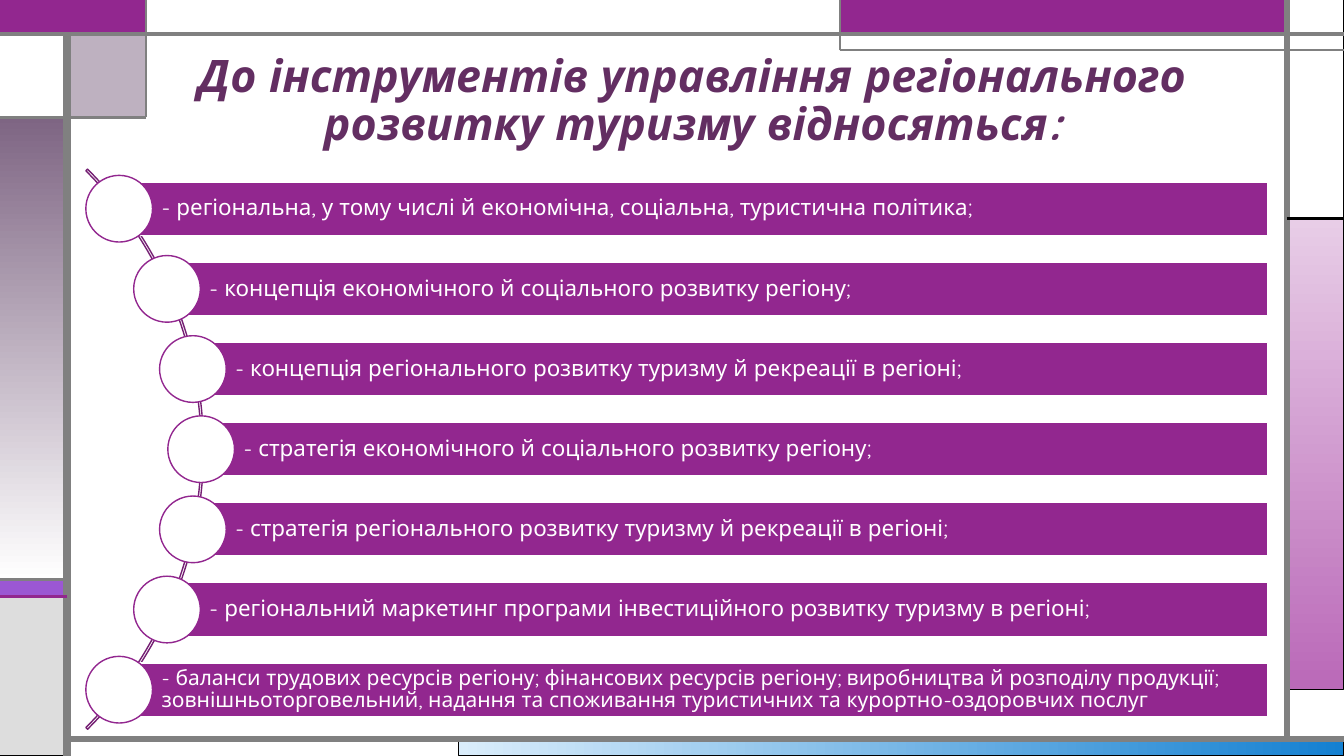
import math
from typing import NamedTuple, Optional

import lxml.etree
import pptx
import pptx.dml.color
import pptx.enum.shapes
import pptx.enum.text
import pptx.oxml.ns
import pptx.util
from pptx.dml.color import RGBColor
from pptx.enum.shapes import MSO_SHAPE
from pptx.util import Cm

FONT = "Quicksand"
WHITE = RGBColor(0xFF, 0xFF, 0xFF)
BLACK = RGBColor(0x00, 0x00, 0x00)
GRAY = RGBColor(0x80, 0x80, 0x80)
LIGHT_GRAY = RGBColor(0xDD, 0xDD, 0xDD)
PURPLE = RGBColor(0x92, 0x27, 0x8F)
DARK_PURPLE = RGBColor(0x75, 0x1F, 0x73)
TITLE_PURPLE = RGBColor(0x63, 0x2E, 0x62)
VIOLET = RGBColor(0x9B, 0x57, 0xD3)
INDIGO = RGBColor(0x75, 0x5D, 0xD9)
MAUVE = RGBColor(0x7E, 0x65, 0x83)
PALE_PINK = RGBColor(0xE8, 0xCD, 0xE7)
PINK = RGBColor(0xBA, 0x69, 0xB8)
PALE_BLUE = RGBColor(0xDA, 0xED, 0xFB)
BLUE = RGBColor(0x14, 0x80, 0xD1)

# Frame grid, in centimetres
WIDTH, HEIGHT = 33.87, 19.05
SIDE, TAB, HEADER, RIGHT = 1.69, 3.67, 21.17, 32.43
TOP, HEADER_END, TAB_END, BOTTOM = 0.85, 1.27, 2.96, 18.63
STRIPE, STRIPE_END, CORNER_END = 14.61, 15.03, 5.5

# Curved list, in centimetres
ARC_X, ARC_Y, ARC_RADIUS, CIRCLE_PATH_RADIUS = -4.85, 11.32, 9.98, 9.92
ROW_PITCH, BAR_HEIGHT, BAR_RIGHT, CIRCLE = 2.02, 1.35, 31.94, 1.68


class Panel(NamedTuple):
    left: float
    top: float
    right: float
    bottom: float
    fill: RGBColor
    line: RGBColor = BLACK
    line_width: float = 0.75
    gradient_end: Optional[RGBColor] = None
    angle: float = 270
    opacity: int = 100


class Rule(NamedTuple):
    x1: float
    y1: float
    x2: float
    y2: float
    width: float
    color: RGBColor = GRAY


class Item(NamedTuple):
    text: str
    size: float = 16


PANELS = [
    Panel(11.56, BOTTOM, WIDTH, HEIGHT, PALE_BLUE, gradient_end=BLUE, angle=0),
    Panel(RIGHT, CORNER_END, WIDTH, 17.37, PALE_PINK, gradient_end=PINK),
    Panel(0, STRIPE, SIDE, STRIPE_END, VIOLET),
    Panel(0, STRIPE_END, SIDE, HEIGHT, LIGHT_GRAY),
    Panel(RIGHT, 0, WIDTH, CORNER_END, WHITE),
    Panel(HEADER, 0, RIGHT, TOP, PURPLE, INDIGO),
    Panel(SIDE, TOP, TAB, TAB_END, MAUVE, opacity=50),
    Panel(0, TAB_END, SIDE, STRIPE, MAUVE, gradient_end=WHITE),
    Panel(0, TOP, SIDE, TAB_END, WHITE),
    Panel(0, 0, TAB, TOP, PURPLE, PURPLE, 1.5),
    Panel(TAB, 0, HEADER, TOP, WHITE, GRAY),
]

RULES = [
    Rule(SIDE, HEIGHT, SIDE, TOP, 6),
    Rule(SIDE, BOTTOM, WIDTH, BOTTOM, 4.5),
    Rule(RIGHT, BOTTOM, RIGHT, 0, 4.5),
    Rule(0, TOP, WIDTH, TOP, 3),
    Rule(WIDTH, HEADER_END, HEADER, HEADER_END, 1.5),
    Rule(HEADER, HEADER_END, HEADER, 0, 1.5),
    Rule(RIGHT, CORNER_END, WIDTH, CORNER_END, 2.25, BLACK),
    Rule(TAB, 0, TAB, TAB_END, 1.5),
    Rule(TAB, TAB_END, 0, TAB_END, 2.25),
    Rule(SIDE, STRIPE, 0, STRIPE, 2.25),
    Rule(SIDE, STRIPE_END, 0, STRIPE_END, 2.25, PURPLE),
]

TITLE = "До інструментів управління регіонального розвитку туризму відносяться:"
ITEMS = [
    Item("- регіональна, у тому числі й економічна, соціальна, туристична політика;"),
    Item("- концепція економічного й соціального розвитку регіону;"),
    Item("- концепція регіонального розвитку туризму й рекреації в регіоні;"),
    Item("- стратегія економічного й соціального розвитку регіону;"),
    Item("- стратегія регіонального розвитку туризму й рекреації в регіоні;"),
    Item("- регіональний маркетинг програми інвестиційного розвитку туризму в регіоні;"),
    Item("- баланси трудових ресурсів регіону; фінансових ресурсів регіону; "
         "виробництва й розподілу продукції; зовнішньоторговельний, надання та "
         "споживання туристичних та курортно-оздоровчих послуг", 15),
]


def add_outlined(slide, kind: MSO_SHAPE, left: float, top: float, width: float,
                 height: float, fill: Optional[RGBColor], line: RGBColor,
                 line_width: float):
    shape = slide.shapes.add_shape(kind, Cm(left), Cm(top), Cm(width), Cm(height))
    shape.shadow.inherit = False
    if fill is None:
        shape.fill.background()
    else:
        shape.fill.solid()
        shape.fill.fore_color.rgb = fill
    shape.line.color.rgb = line
    shape.line.width = pptx.util.Pt(line_width)
    return shape


def add_panel(slide, panel: Panel) -> None:
    shape = add_outlined(slide, MSO_SHAPE.RECTANGLE, panel.left, panel.top,
                         panel.right - panel.left, panel.bottom - panel.top,
                         panel.fill, panel.line, panel.line_width)
    if panel.gradient_end is not None:
        shape.fill.gradient()
        shape.fill.gradient_angle = panel.angle
        for stop, color in zip(shape.fill.gradient_stops,
                               (panel.fill, panel.gradient_end)):
            stop.color.rgb = color
    if panel.opacity < 100:
        color_element = shape._element.spPr.find(
            "/".join(map(pptx.oxml.ns.qn, ("a:solidFill", "a:srgbClr"))))
        alpha = lxml.etree.SubElement(color_element, pptx.oxml.ns.qn("a:alpha"))
        alpha.set("val", str(panel.opacity * 1000))


def add_rule(slide, rule: Rule) -> None:
    connector = slide.shapes.add_connector(
        pptx.enum.shapes.MSO_CONNECTOR.STRAIGHT,
        Cm(rule.x1), Cm(rule.y1), Cm(rule.x2), Cm(rule.y2))
    connector.line.color.rgb = rule.color
    connector.line.width = pptx.util.Pt(rule.width)
    lxml.etree.SubElement(connector._element.spPr, pptx.oxml.ns.qn("a:effectLst"))


def write_text(shape, text: str, size: float, color: RGBColor,
               alignment: pptx.enum.text.PP_ALIGN,
               anchor: pptx.enum.text.MSO_ANCHOR, emphasis: bool = False) -> None:
    frame = shape.text_frame
    frame.text = text
    frame.word_wrap = True
    frame.vertical_anchor = anchor
    paragraph = frame.paragraphs[0]
    paragraph.alignment = alignment
    paragraph.line_spacing = 0.9
    font = paragraph.runs[0].font
    font.name = FONT
    font.size = pptx.util.Pt(size)
    font.color.rgb = color
    font.bold = font.italic = emphasis


def add_title(slide) -> None:
    box = slide.shapes.add_textbox(Cm(4.11), Cm(0.74), Cm(26.67), Cm(3.17))
    write_text(box, TITLE, 32, TITLE_PURPLE, pptx.enum.text.PP_ALIGN.CENTER,
               pptx.enum.text.MSO_ANCHOR.BOTTOM, emphasis=True)


def add_curved_list(slide) -> None:
    """Draw the arc, then one bar and circle per item, centred along the arc."""
    arc = add_outlined(slide, MSO_SHAPE.BLOCK_ARC, ARC_X - ARC_RADIUS,
                       ARC_Y - ARC_RADIUS, 2 * ARC_RADIUS, 2 * ARC_RADIUS,
                       None, DARK_PURPLE, 1)
    for index, value in enumerate((189, 27, 0.003)):
        arc.adjustments[index] = value
    for row, item in enumerate(ITEMS):
        offset = (row - (len(ITEMS) - 1) / 2) * ROW_PITCH
        x = ARC_X + math.sqrt(CIRCLE_PATH_RADIUS ** 2 - offset ** 2)
        y = ARC_Y + offset
        bar = add_outlined(slide, MSO_SHAPE.RECTANGLE, x, y - BAR_HEIGHT / 2,
                           BAR_RIGHT - x, BAR_HEIGHT, PURPLE, WHITE, 1)
        frame = bar.text_frame
        frame.margin_left = Cm(1.07)
        frame.margin_top = frame.margin_right = frame.margin_bottom = Cm(0.1)
        write_text(bar, item.text, item.size, WHITE, pptx.enum.text.PP_ALIGN.LEFT,
                   pptx.enum.text.MSO_ANCHOR.MIDDLE)
        add_outlined(slide, MSO_SHAPE.OVAL, x - CIRCLE / 2, y - CIRCLE / 2,
                     CIRCLE, CIRCLE, WHITE, PURPLE, 1)


def main() -> None:
    presentation = pptx.Presentation()
    presentation.slide_width, presentation.slide_height = Cm(WIDTH), Cm(HEIGHT)
    slide = presentation.slides.add_slide(presentation.slide_layouts[6])
    for panel in PANELS:
        add_panel(slide, panel)
    for rule in RULES:
        add_rule(slide, rule)
    add_title(slide)
    add_curved_list(slide)
    presentation.save("out.pptx")


if __name__ == "__main__":
    main()
